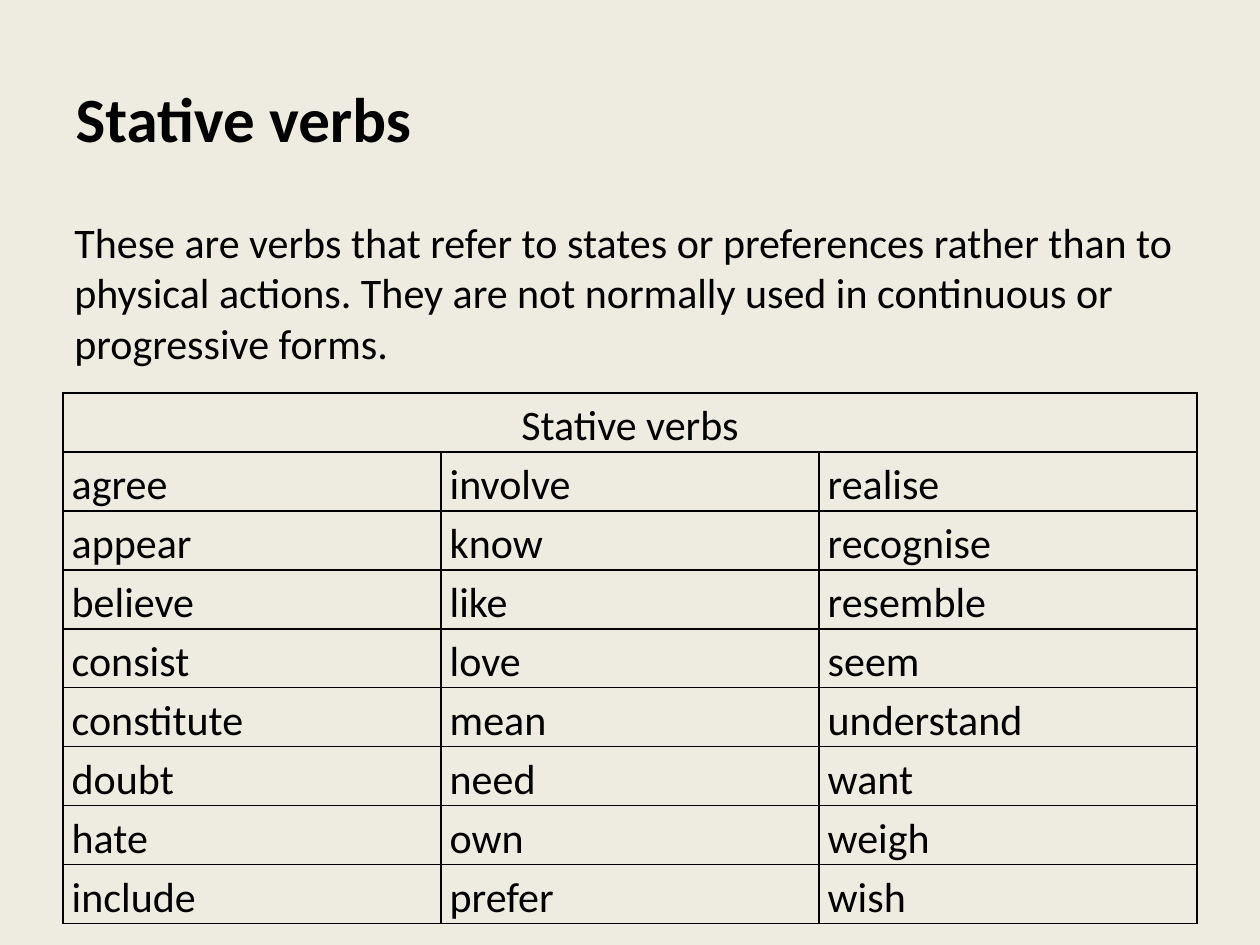
"""Build a slide that explains and lists stative verbs."""
from dataclasses import dataclass

from lxml import etree
from pptx import Presentation
from pptx.dml.color import RGBColor
from pptx.enum import text
from pptx.oxml import ns
from pptx.util import Pt


@dataclass(frozen=True)
class Theme:
    font: str = "Calibri"
    ink: str = "000000"
    back: str = "EEECE1"
    head: int = 36
    body: int = 24
    rule: int = 1


class Deck:
    def __init__(self, theme, wide, high):
        self.theme = theme
        self.prs = Presentation()
        self.prs.slide_width, self.prs.slide_height = Pt(wide), Pt(high)
        self.slide = self.prs.slides.add_slide(self.prs.slide_layouts[5])
        fill = self.slide.background.fill
        fill.solid()
        fill.fore_color.rgb = RGBColor.from_string(theme.back)

    def style(self, para, size, bold=False, align=text.PP_ALIGN.LEFT):
        para.alignment = align
        font = para.font
        font.name, font.size, font.bold = self.theme.font, Pt(size), bold
        font.color.rgb = RGBColor.from_string(self.theme.ink)

    def title(self, words, left, top, wide, high):
        box = self.slide.shapes.title
        box.left, box.top, box.width, box.height = map(Pt, (left, top, wide, high))
        frame = box.text_frame
        frame.text = words
        frame.vertical_anchor = text.MSO_ANCHOR.MIDDLE
        self.style(frame.paragraphs[0], self.theme.head, bold=True)

    def note(self, words, left, top, wide, high):
        box = self.slide.shapes.add_textbox(*map(Pt, (left, top, wide, high)))
        frame = box.text_frame
        frame.text = words
        frame.word_wrap = True
        frame.auto_size = text.MSO_AUTO_SIZE.SHAPE_TO_FIT_TEXT
        self.style(frame.paragraphs[0], self.theme.body)

    def edge(self, cell):
        props = cell._tc.get_or_add_tcPr()
        for spot, side in enumerate(("lnL", "lnR", "lnT", "lnB")):
            line = etree.Element(ns.qn(f"a:{side}"), w=str(Pt(self.theme.rule)))
            fill = etree.SubElement(line, ns.qn("a:solidFill"))
            etree.SubElement(fill, ns.qn("a:srgbClr"), val=self.theme.ink)
            props.insert(spot, line)

    def cell(self, cell, words, align):
        cell.text = words
        cell.fill.background()
        cell.margin_left = cell.margin_right = Pt(5)
        cell.margin_top = cell.margin_bottom = 0
        para = cell.text_frame.paragraphs[0]
        para.line_spacing = 1.15
        self.style(para, self.theme.body, align=align)
        self.edge(cell)

    def table(self, head, rows, left, top, wide, high):
        cols = len(rows[0])
        grid = self.slide.shapes.add_table(
            len(rows) + 1, cols, *map(Pt, (left, top, wide, high))).table
        grid.first_row = grid.horz_banding = False
        grid.cell(0, 0).merge(grid.cell(0, cols - 1))
        for r, row in enumerate([[head] + [""] * (cols - 1), *rows]):
            align = text.PP_ALIGN.LEFT if r else text.PP_ALIGN.CENTER
            for c, words in enumerate(row):
                self.cell(grid.cell(r, c), words, align)


VERBS = [
    ("agree", "involve", "realise"),
    ("appear", "know", "recognise"),
    ("believe", "like", "resemble"),
    ("consist", "love", "seem"),
    ("constitute", "mean", "understand"),
    ("doubt", "need", "want"),
    ("hate", "own", "weigh"),
    ("include", "prefer", "wish"),
]


def main():
    deck = Deck(Theme(), 720, 540)
    deck.title("Stative verbs", 36, 21.6, 648, 90.7)
    deck.table("Stative verbs", VERBS, 36, 224.6, 648, 298)
    deck.note("These are verbs that refer to states or preferences rather than "
              "to physical actions. They are not normally used in continuous "
              "or progressive forms.", 35.4, 120.2, 646.6, 94.3)
    deck.prs.save("out.pptx")


if __name__ == "__main__":
    main()
